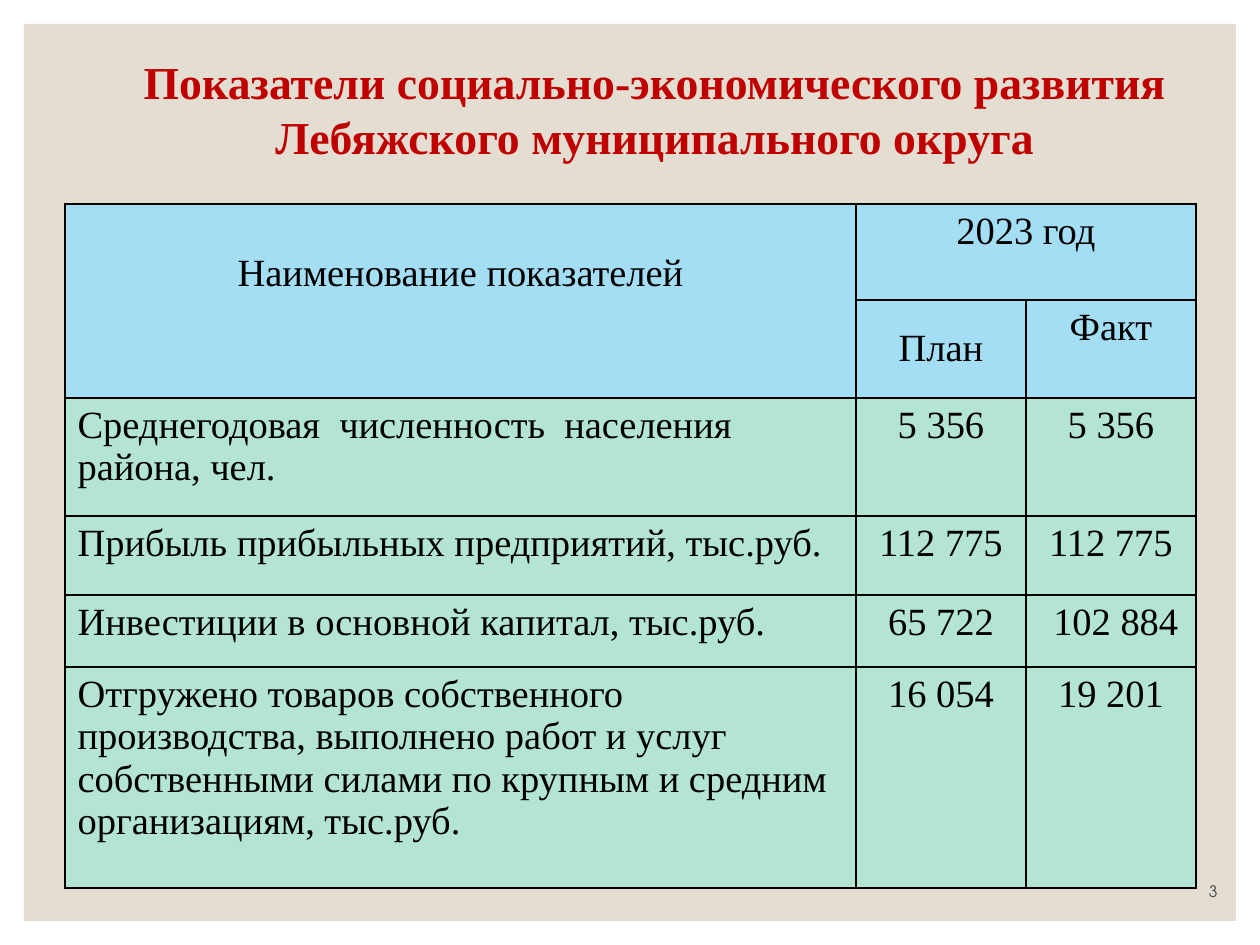
from dataclasses import dataclass

from lxml.etree import SubElement
from pptx import Presentation
from pptx.dml.color import RGBColor
from pptx.enum.shapes import MSO_SHAPE
from pptx.enum.text import MSO_ANCHOR, MSO_AUTO_SIZE, PP_ALIGN
from pptx.oxml.ns import qn
from pptx.util import Emu, Pt

SERIF, SANS = "Times New Roman", "TeX Gyre Adventor"
BLUE, GREEN = "A4DEF4", "B3E4D6"
COLS = [791, 170, 170]
ROWS = [96, 98, 118, 79, 72, 221]


@dataclass
class Entry:
    row: int
    col: int
    text: str
    fill: str = GREEN
    align: PP_ALIGN = PP_ALIGN.CENTER
    anchor: MSO_ANCHOR = MSO_ANCHOR.TOP
    top: int = 6


HEADS = [
    Entry(0, 0, "Наименование показателей", BLUE, top=48),
    Entry(0, 1, "2023 год", BLUE),
    Entry(1, 1, "План", BLUE, anchor=MSO_ANCHOR.MIDDLE),
    Entry(1, 2, "Факт", BLUE),
]
DATA = [
    ("Среднегодовая  численность  населения района, чел.", "5 356", "5 356"),
    ("Прибыль прибыльных предприятий, тыс.руб.", "112 775", "112 775"),
    ("Инвестиции в основной капитал, тыс.руб.", "65 722", " 102 884"),
    ("Отгружено товаров собственного производства, выполнено работ и услуг "
     "собственными силами по крупным и средним организациям, тыс.руб.",
     "16 054", "19 201"),
]


def px(n: int) -> Emu:
    return Emu(n * 914400 // 126)


def hue(code: str) -> RGBColor:
    return RGBColor.from_string(code)


def place(shape, x: int, y: int, w: int, h: int) -> None:
    shape.left, shape.top, shape.width, shape.height = map(px, (x, y, w, h))


def write(frame, text: str, size: float, color: str, align: PP_ALIGN,
          font: str = SERIF, bold: bool = False) -> None:
    para = frame.paragraphs[0]
    para.alignment = align
    run = para.add_run()
    run.text = text
    run.font.size, run.font.name, run.font.bold = Pt(size), font, bold
    run.font.color.rgb = hue(color)


def edge(cell) -> None:
    """Draw a thin black border on all four sides."""
    props = cell._tc.get_or_add_tcPr()
    for i, side in enumerate(("lnL", "lnR", "lnT", "lnB")):
        line = props.makeelement(qn(f"a:{side}"), {"w": str(Pt(1))})
        fill = SubElement(line, qn("a:solidFill"))
        SubElement(fill, qn("a:srgbClr"), val="000000")
        props.insert(i, line)


def fill_cell(table, entry: Entry) -> None:
    cell = table.cell(entry.row, entry.col)
    cell.vertical_anchor = entry.anchor
    cell.margin_top = px(entry.top)
    write(cell.text_frame, entry.text, 22, "000000", entry.align)


def add_grid(slide) -> None:
    frame = slide.shapes.add_table(len(ROWS), len(COLS), px(65), px(204),
                                   px(sum(COLS)), px(sum(ROWS)))
    table = frame.table
    for col, width in zip(table.columns, COLS):
        col.width = px(width)
    for row, height in zip(table.rows, ROWS):
        row.height = px(height)
    for r in range(len(ROWS)):
        for c in range(len(COLS)):
            cell = table.cell(r, c)
            cell.fill.solid()
            cell.fill.fore_color.rgb = hue(BLUE if r < 2 else GREEN)
            edge(cell)
    table.cell(0, 0).merge(table.cell(1, 0))
    table.cell(0, 1).merge(table.cell(0, 2))
    body = [
        Entry(r, c, text, align=PP_ALIGN.CENTER if c else PP_ALIGN.LEFT)
        for r, line in enumerate(DATA, 2) for c, text in enumerate(line)
    ]
    for entry in HEADS + body:
        fill_cell(table, entry)


def add_panel(slide) -> None:
    panel = slide.shapes.add_shape(MSO_SHAPE.RECTANGLE, 0, 0, 0, 0)
    place(panel, 24, 24, 1212, 897)
    panel.shadow.inherit = False
    panel.fill.solid()
    panel.fill.fore_color.rgb = hue("E3DED1")
    panel.line.fill.background()
    slide.shapes._spTree.insert(2, panel._element)


def add_title(slide) -> None:
    title = slide.shapes.title
    place(title, 88, 50, 1134, 118)
    frame = title.text_frame
    frame.word_wrap = True
    frame.auto_size = MSO_AUTO_SIZE.NONE
    frame.vertical_anchor = MSO_ANCHOR.MIDDLE
    write(frame, "Показатели социально-экономического развития "
          "Лебяжского муниципального округа", 26.1, "C00000",
          PP_ALIGN.CENTER, bold=True)


def add_number(slide) -> None:
    box = slide.shapes.add_textbox(0, 0, 0, 0)
    place(box, 1079, 869, 151, 38)
    box.text_frame.word_wrap = True
    box.text_frame.vertical_anchor = MSO_ANCHOR.BOTTOM
    write(box.text_frame, "3", 9, "404040", PP_ALIGN.RIGHT, SANS)


def main() -> None:
    deck = Presentation()
    deck.slide_width, deck.slide_height = px(1260), px(945)
    slide = deck.slides.add_slide(deck.slide_layouts[5])
    add_panel(slide)
    add_title(slide)
    add_grid(slide)
    add_number(slide)
    deck.save("out.pptx")


if __name__ == "__main__":
    main()
